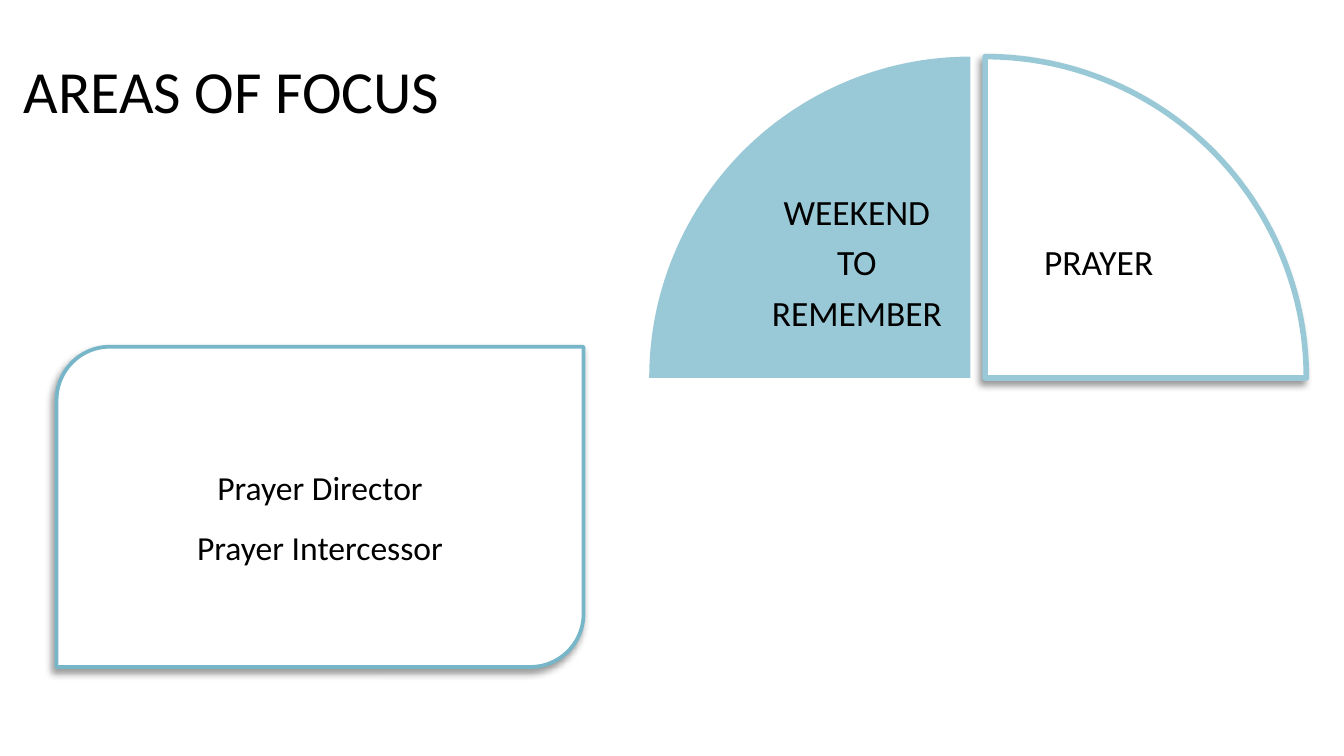
from math import cos, sin, pi
from lxml.etree import SubElement as Sub
from pptx import Presentation
from pptx.dml.color import RGBColor as RGB
from pptx.enum.shapes import MSO_SHAPE as Shape
from pptx.enum.text import MSO_ANCHOR as Anchor, PP_ALIGN as Align
from pptx.oxml.ns import qn
from pptx.util import Cm, Pt

HUES = {"text": "000000", "white": "FFFFFF", "wedge": "99C9D7", "card": "77B6C9"}


def write(shape, lines, size, insets, anchor, **form):
    """Fill the text frame; insets are left, top, right, bottom in cm."""
    frame = shape.text_frame
    frame.word_wrap = True
    frame.vertical_anchor = anchor
    for side, inset in zip(("left", "top", "right", "bottom"), insets):
        setattr(frame, "margin_" + side, Cm(inset))
    frame.text = "\n".join(lines)
    for para in frame.paragraphs:
        for name, value in form.items():
            setattr(para, name, value)
        for run in para.runs:
            run.font.name = "Calibri"
            run.font.size = Pt(size)
            run.font.color.rgb = RGB.from_string(HUES["text"])


def paint(shape, fill, edge=None, width=0):
    """Set fill and outline; an outlined shape also gets a soft shadow."""
    shape.shadow.inherit = False
    shape.fill.solid()
    shape.fill.fore_color.rgb = RGB.from_string(HUES[fill])
    if edge is None:
        shape.line.fill.background()
        return
    shape.line.color.rgb = RGB.from_string(HUES[edge])
    shape.line.width = Pt(width)
    effects = shape._element.spPr.find(qn("a:effectLst"))
    shade = Sub(effects, qn("a:outerShdw"), blurRad=str(Pt(4)), dist=str(Pt(3)),
                dir=str(135 * 60000), algn="tl", rotWithShape="0")
    color = Sub(shade, qn("a:srgbClr"), val=HUES["text"])
    Sub(color, qn("a:alpha"), val="40000")


deck = Presentation()
deck.slide_width, deck.slide_height = Cm(25.4), Cm(14.28)
slide = deck.slides.add_slide(deck.slide_layouts[6])
shapes = slide.shapes

title = shapes.add_textbox(Cm(0.2), Cm(0.89), Cm(15.67), Cm(1.47))
write(title, ["AREAS OF FOCUS"], 32, (0.25, 0.13, 0.25, 0.13), Anchor.TOP)

# Two quarter discs, each drawn from its square corner outwards
radius, base, steps = 6.07, 7.14, 60
wedges = [
    (18.34, -1, ["WEEKEND", "TO", "REMEMBER"], (2.16, 2.16, 0.38, 0.38),
     ("wedge",)),
    (18.62, 1, ["PRAYER"], (0.38, 2.16, 2.16, 0.38), ("white", "wedge", 3)),
]
for corner, side, lines, insets, look in wedges:
    turns = [pi / 2 * step / steps for step in range(steps + 1)]
    arc = [(Cm(corner + side * radius * cos(turn)), Cm(base - radius * sin(turn)))
           for turn in turns]
    path = shapes.build_freeform(Cm(corner), Cm(base))
    path.add_line_segments(arc, close=True)
    wedge = path.convert_to_shape()
    paint(wedge, *look)
    write(wedge, lines, 19, insets, Anchor.MIDDLE, alignment=Align.CENTER,
          line_spacing=0.9, space_after=Pt(6.65))

card = shapes.add_shape(Shape.ROUND_2_DIAG_RECTANGLE,
                        Cm(1.07), Cm(6.55), Cm(9.96), Cm(6.05))
paint(card, "white", "card", 2)
write(card, ["Prayer Director", "Prayer Intercessor"], 18,
      (0.25, 0.13, 0.25, 0.13), Anchor.MIDDLE,
      alignment=Align.CENTER, line_spacing=1.5)

deck.save("out.pptx")
